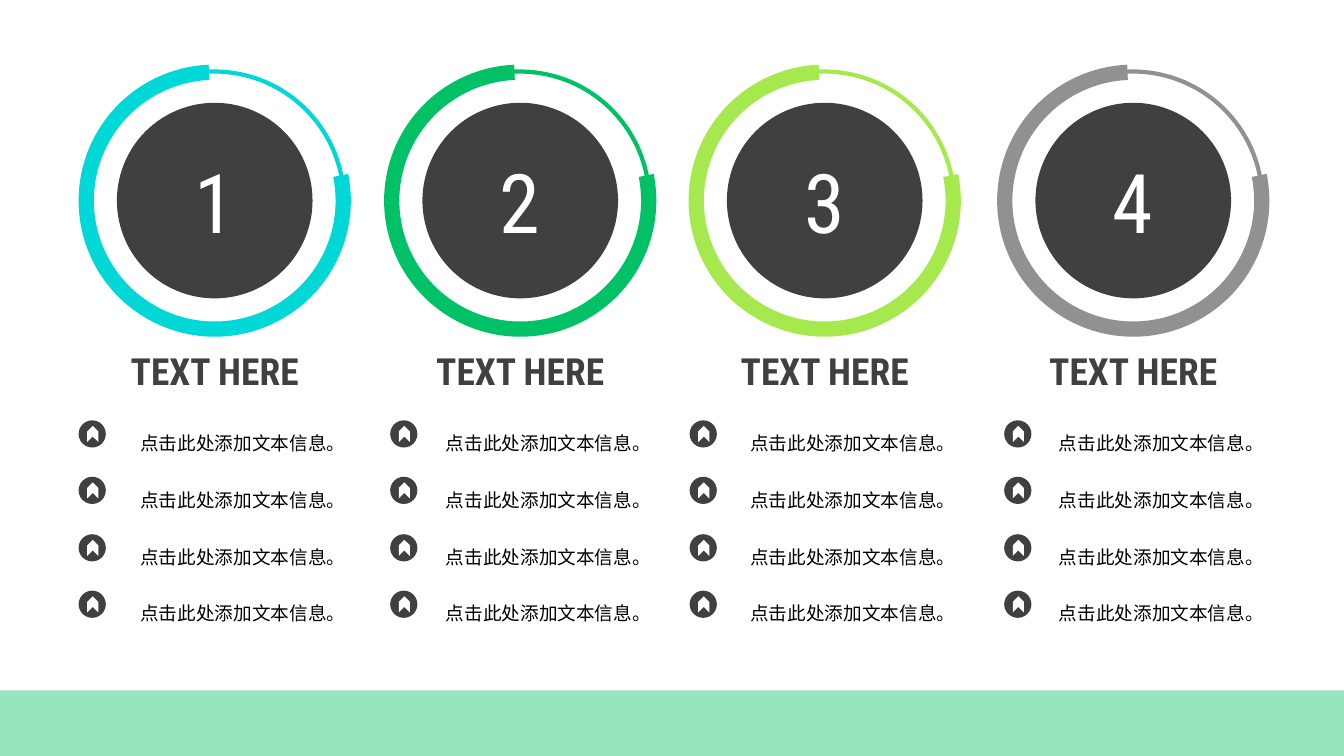
from lxml.etree import SubElement
from pptx import Presentation
from pptx.dml.color import RGBColor
from pptx.enum.shapes import MSO_SHAPE
from pptx.enum.text import MSO_ANCHOR, PP_ALIGN
from pptx.oxml.ns import qn
from pptx.util import Pt

EMU_PER_PX = 9144
CYAN = RGBColor(0x00, 0xD7, 0xD7)
GREEN = RGBColor(0x00, 0xC1, 0x65)
LIME = RGBColor(0xA6, 0xE9, 0x4E)
GRAY = RGBColor(0x91, 0x91, 0x91)
DARK = RGBColor(0x40, 0x40, 0x40)
WHITE = RGBColor(0xFF, 0xFF, 0xFF)
BLACK = RGBColor(0x00, 0x00, 0x00)

LATIN_FONT = "Roboto Condensed"
CHINESE_FONT = "Noto Sans CJK SC"
ITEM = "点击此处添加文本信息。"
COLUMNS = [(78, 78, CYAN), (381, 387, GREEN), (683, 684, LIME), (989, 996, GRAY)]
ROW_COUNT = 4
ROW_TOP = 417
ROW_STEP = 56.4


def px(*lengths):
    """Turn pixel lengths into EMU."""
    return [length * EMU_PER_PX for length in lengths]


def add_figure(slide, kind, box, fill=None, line=None, rotation=0):
    """Add a preset shape with a plain fill or a plain outline."""
    shape = slide.shapes.add_shape(kind, *px(*box))
    shape.shadow.inherit = False
    shape.rotation = rotation
    if fill is None:
        shape.fill.background()
    else:
        shape.fill.solid()
        shape.fill.fore_color.rgb = fill
    if line is None:
        shape.line.fill.background()
    else:
        shape.line.color.rgb = line
        shape.line.width = Pt(3)
    return shape


def write_text(shape, text, *, size, color, font, bold=False, spacing=None,
               anchor=MSO_ANCHOR.TOP):
    """Write one centred paragraph into a shape."""
    frame = shape.text_frame
    frame.word_wrap = True
    frame.vertical_anchor = anchor
    paragraph = frame.paragraphs[0]
    paragraph.alignment = PP_ALIGN.CENTER
    if spacing is not None:
        paragraph.line_spacing = spacing
    run = paragraph.add_run()
    run.text = text
    run.font.size = Pt(size)
    run.font.bold = bold
    run.font.color.rgb = color
    run.font.name = font
    SubElement(run.font._element, qn("a:ea"), typeface=font)


def add_text(slide, text, box, **text_format):
    """Add a text box with formatted text."""
    write_text(slide.shapes.add_textbox(*px(*box)), text, **text_format)


def add_ring(slide, number, left, color):
    """Add a numbered disc inside its partly thick ring."""
    arc = add_figure(slide, MSO_SHAPE.BLOCK_ARC, (left, 64, 270, 270), fill=color,
                     rotation=270)
    for index, value in enumerate((47.2, 214.465, 0.056)):
        arc.adjustments[index] = value
    add_figure(slide, MSO_SHAPE.OVAL, (left + 6, 71, 257, 257), line=color)
    disc = add_figure(slide, MSO_SHAPE.OVAL, (left + 38, 102, 194, 194), fill=DARK)
    write_text(disc, str(number), size=58.7, color=WHITE, font=LATIN_FONT,
               anchor=MSO_ANCHOR.MIDDLE)


def add_item(slide, icon_left, text_left, top):
    """Add an arrow icon and the line of text beside it."""
    add_figure(slide, MSO_SHAPE.OVAL, (icon_left, top, 27, 27), fill=DARK)
    add_figure(slide, MSO_SHAPE.CHEVRON, (icon_left + 6, top + 8, 16, 11), fill=WHITE,
               rotation=270)
    add_text(slide, ITEM, (text_left, top, 270, 39), size=13.3, color=BLACK,
             font=CHINESE_FONT, spacing=1.3)


def add_band(slide):
    """Add the translucent band along the bottom edge."""
    band = add_figure(slide, MSO_SHAPE.RECTANGLE, (0, 685, 1333, 65), fill=GREEN)
    color = band.fill._xPr.find(qn("a:solidFill"))[0]
    SubElement(color, qn("a:alpha"), val="41000")


def main():
    """Build the slide and save it."""
    presentation = Presentation()
    presentation.slide_width, presentation.slide_height = px(1333, 750)
    slide = presentation.slides.add_slide(presentation.slide_layouts[6])
    for number, (left, icon_left, color) in enumerate(COLUMNS, start=1):
        add_ring(slide, number, left, color)
        add_text(slide, "TEXT HERE", (left + 16, 357, 238, 38), size=26.7, color=DARK,
                 font=LATIN_FONT, bold=True, spacing=Pt(20))
        for row in range(ROW_COUNT):
            add_item(slide, icon_left, left + 28, ROW_TOP + round(row * ROW_STEP))
    add_band(slide)
    presentation.save("out.pptx")


if __name__ == "__main__":
    main()
